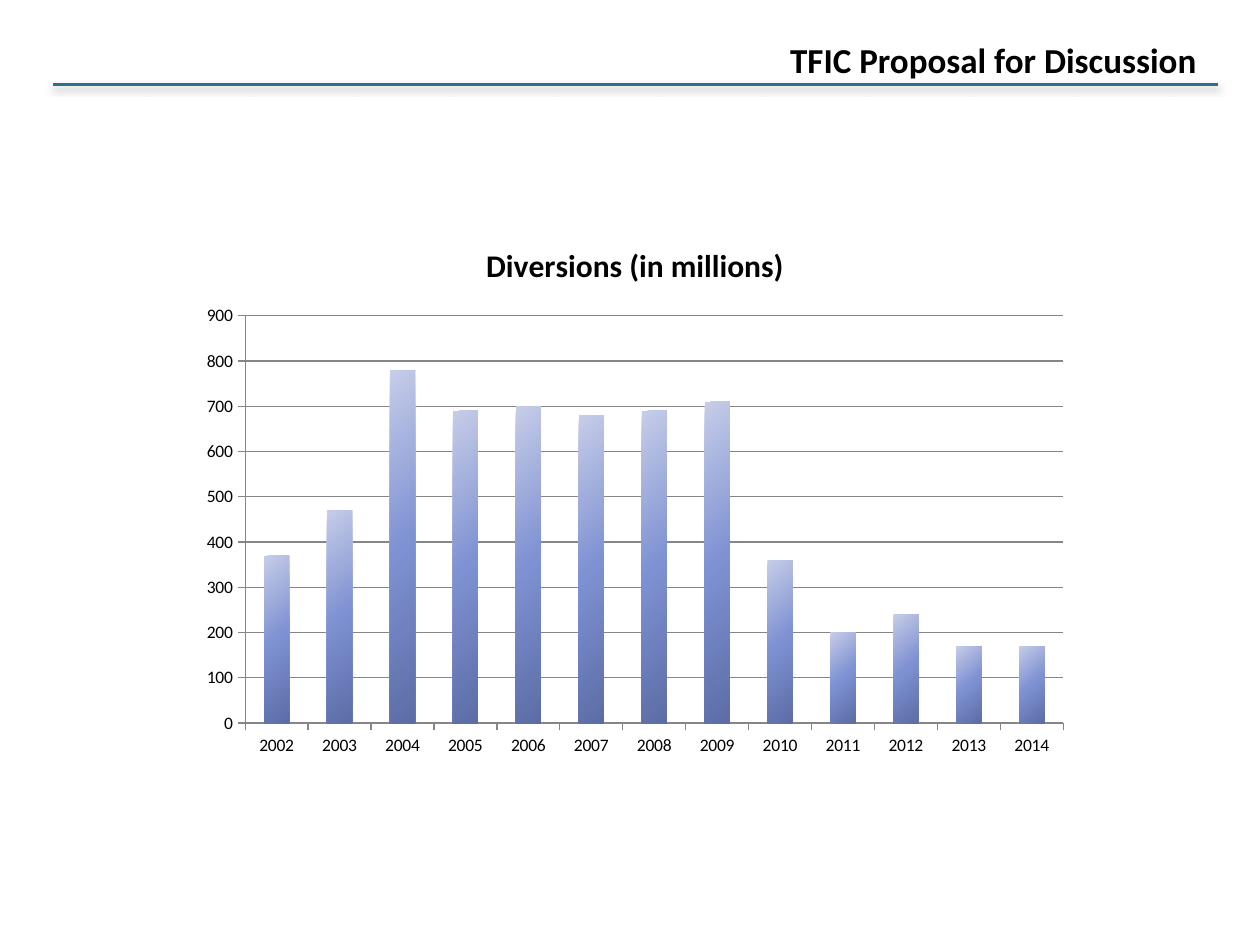
"""Build the diversions slide with its title, rule and column chart."""
import copy
import dataclasses

import lxml.etree
import pptx
import pptx.chart.data
import pptx.dml.color
import pptx.enum.chart
import pptx.enum.text
import pptx.oxml
import pptx.oxml.ns
import pptx.util

Inches = pptx.util.Inches
Pt = pptx.util.Pt


@dataclasses.dataclass(frozen=True)
class Theme:
    """Colours, font and type sizes."""
    font: str = "Calibri"
    text: str = "000000"
    rule: str = "306F8C"
    grid: str = "868686"
    bars: tuple = ("C6CDE8", "7E91D2", "5C6DA6")
    title_size: int = 20
    chart_title_size: int = 18
    label_size: int = 10


class SlideBuilder:
    """Hold the theme and the current slide."""

    def __init__(self, theme, slide):
        """Keep the theme and slide."""
        self.theme = theme
        self.slide = slide

    def rgb(self, value):
        """Return a colour object."""
        return pptx.dml.color.RGBColor.from_string(value)

    def style_font(self, font, size, bold=False):
        """Apply the theme font."""
        font.name = self.theme.font
        font.size = Pt(size)
        font.bold = bold
        font.color.rgb = self.rgb(self.theme.text)

    def title(self, wording, left, top, width, height):
        """Place and format the title."""
        heading = self.slide.shapes.title
        heading.left, heading.top = Inches(left), Inches(top)
        heading.width, heading.height = Inches(width), Inches(height)
        frame = heading.text_frame
        frame.text = wording
        frame.word_wrap = False
        frame.auto_size = pptx.enum.text.MSO_AUTO_SIZE.SHAPE_TO_FIT_TEXT
        frame.vertical_anchor = pptx.enum.text.MSO_ANCHOR.MIDDLE
        paragraph = frame.paragraphs[0]
        paragraph.alignment = pptx.enum.text.PP_ALIGN.CENTER
        self.style_font(paragraph.runs[0].font, self.theme.title_size, True)

    def rule(self, left, right, top):
        """Draw a horizontal rule with a soft shadow."""
        rule = self.slide.shapes.add_connector(
            pptx.enum.shapes.MSO_CONNECTOR.STRAIGHT,
            Inches(left), Inches(top), Inches(right), Inches(top))
        rule.line.color.rgb = self.rgb(self.theme.rule)
        rule.line.width = Pt(1.5)
        rule._element.spPr.append(pptx.oxml.parse_xml(
            f'<a:effectLst {pptx.oxml.ns.nsdecls("a")}>'
            f'<a:outerShdw blurRad="{Pt(4.1)}" dist="{Pt(2)}" dir="5400000" rotWithShape="0">'
            f'<a:srgbClr val="{self.theme.text}"><a:alpha val="40000"/></a:srgbClr>'
            '</a:outerShdw></a:effectLst>'))

    def gradient(self, fill, colours, angle):
        """Fill with evenly spaced colours."""
        fill.gradient()
        fill.gradient_angle = angle
        first = fill._fill._gradFill.gsLst[0]
        for _ in colours[2:]:
            first.addnext(copy.deepcopy(first))
        for index, (stop, colour) in enumerate(zip(fill.gradient_stops, colours)):
            stop.position = index / (len(colours) - 1)
            stop.color.rgb = self.rgb(colour)

    def column_chart(self, heading, values, left, top, width, height):
        """Add a column chart of values by year."""
        data = pptx.chart.data.CategoryChartData()
        data.categories = values.keys()
        data.add_series("Series 1", values.values())
        chart = self.slide.shapes.add_chart(
            pptx.enum.chart.XL_CHART_TYPE.COLUMN_CLUSTERED,
            Inches(left), Inches(top), Inches(width), Inches(height), data).chart
        self.style_font(chart.font, self.theme.label_size)
        chart.has_legend = False
        chart.has_title = True
        chart.chart_title.text_frame.text = heading
        chart.chart_title.include_in_layout = False
        self.style_font(chart.chart_title.text_frame.paragraphs[0].runs[0].font,
                        self.theme.chart_title_size, True)
        plot = chart.plots[0]
        plot.vary_by_categories = False
        plot.gap_width = 150
        self.gradient(plot.series[0].format.fill, self.theme.bars, 310)
        scale = chart.value_axis
        scale.minimum_scale, scale.maximum_scale, scale.major_unit = 0, 900, 100
        scale.has_major_gridlines = True
        for axis in (chart.category_axis, scale):
            axis.major_tick_mark = pptx.enum.chart.XL_TICK_MARK.OUTSIDE
            axis.minor_tick_mark = pptx.enum.chart.XL_TICK_MARK.NONE
        for line in (chart.category_axis.format.line, scale.format.line,
                     scale.major_gridlines.format.line):
            line.color.rgb = self.rgb(self.theme.grid)
            line.width = Pt(0.75)


def main():
    """Build and save the presentation."""
    deck = pptx.Presentation()
    deck.slide_width, deck.slide_height = Inches(10), Inches(7.5)
    builder = SlideBuilder(Theme(), deck.slides.add_slide(deck.slide_layouts[5]))
    diversions = dict(enumerate(
        (370, 470, 780, 690, 700, 680, 690, 710, 360, 200, 240, 170, 170), 2002))
    builder.column_chart("Diversions (in millions)", diversions, 1.5, 1.75, 7.08, 4.33)
    builder.rule(0.42, 9.67, 0.67)
    builder.title("TFIC Proposal for Discussion", 6.08, 0.25, 3.61, 0.44)
    deck.save("out.pptx")


if __name__ == "__main__":
    main()
